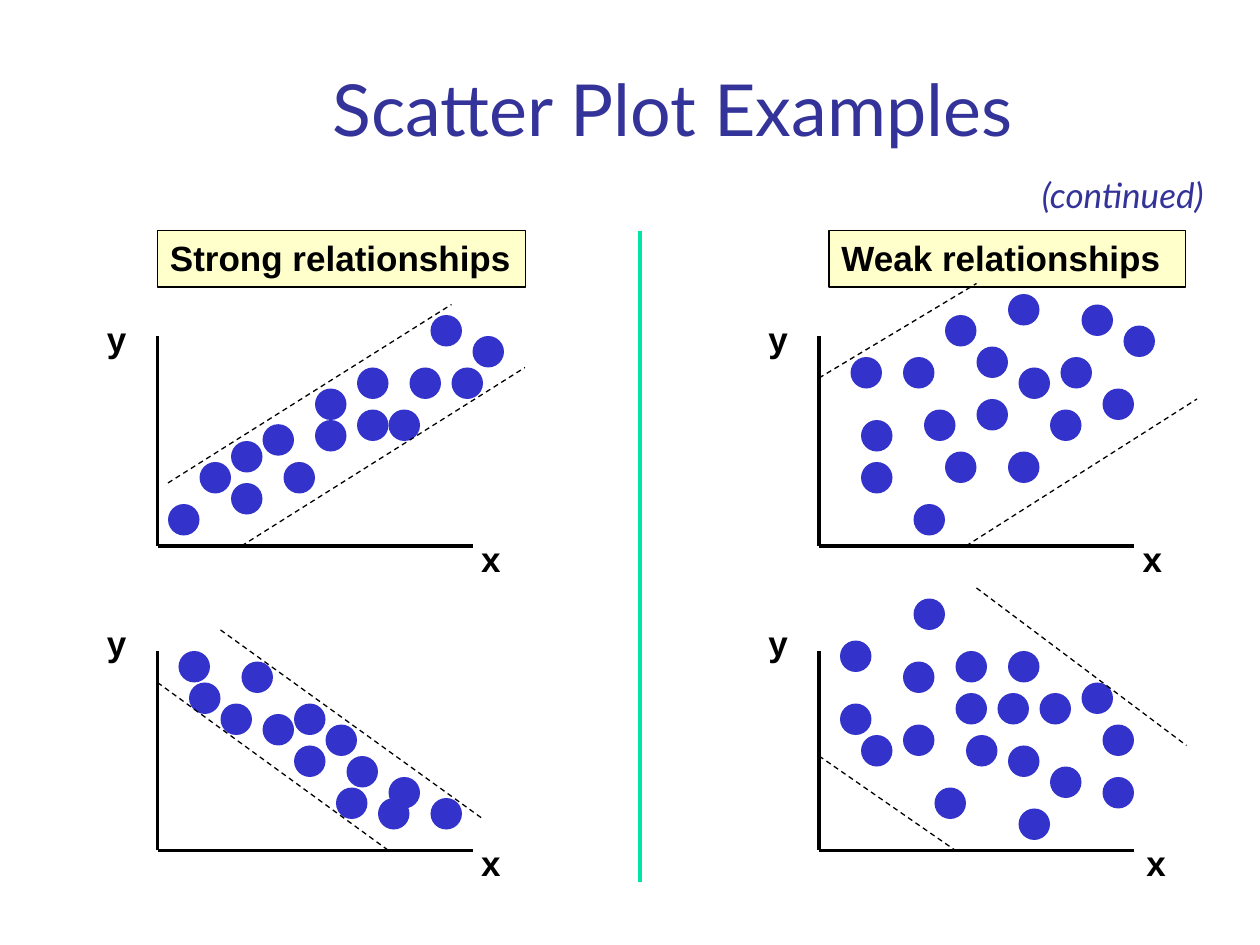
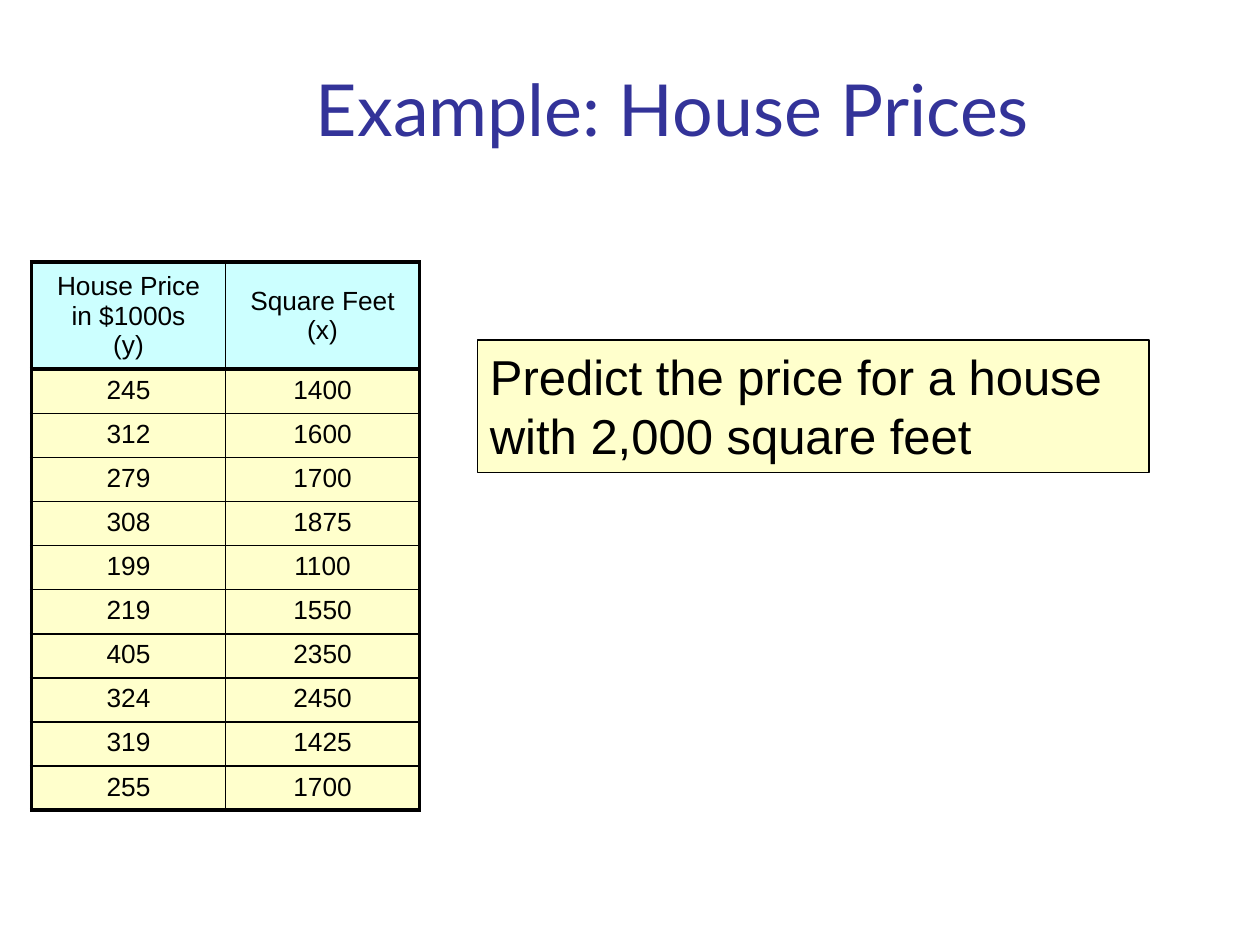
from pptx import Presentation
from pptx.dml.color import RGBColor
from pptx.enum import dml, shapes, text
from pptx.oxml import ns, xmlchemy as xc
from pptx.util import Inches, Pt

BLACK, NAVY, DOT = "000000", "333399", "3333CC"
CREAM, AQUA, GREEN = "FFFFCC", "CCFFFF", "00E4A8"
GRID = 1 / 12
LABEL = dict(name="Arial", size=Pt(20), bold=True)
TITLE = dict(name="Lato", size=Pt(41))
CONTINUED = dict(name="Lato", size=Pt(20), italic=True)
PROMPT = dict(name="Arial", size=Pt(28))
CELL = dict(name="Arial", size=Pt(15))

PLOTS = [
    dict(left=1.25, top=32 * GRID, height=20, y_label=2.47,
         dots=[(1, 16), (4, 12), (26, -2), (28, 3), (7, 14), (30, 0), (19, 7), (19, 3),
               (24, 3), (15, 5), (7, 10), (10, 8.4), (22, 7), (15, 8), (12, 12)],
         bands=[(1, 14, 28, -3), (8, 20, 35, 3)]),
    dict(left=1.25, top=62 * GRID, height=19, y_label=4.88,
         dots=[(21, 14), (3, 3), (26, 14), (8, 1), (18, 10), (22, 12), (13, 5), (2, 0),
               (6, 5), (10, 6), (17, 13), (16, 7), (13, 9)],
         bands=[(6, -2, 31, 16), (0, 3, 22, 19)]),
    dict(left=6.5, top=32 * GRID, height=20, y_label=2.47,
         dots=[(15, 1), (4, 12), (18, 11), (23, 2), (8, 2), (9, 16), (12, 11), (19, 3),
               (12, -2), (4, 8), (3, 2), (10, 7), (22, 7), (15, 6), (18, -4), (29, -1),
               (27, 5), (25, -3)],
         bands=[(0, 4, 15, -5), (14, 20, 36, 6)]),
    dict(left=6.5, top=62 * GRID, height=19, y_label=4.88, x_shift=0,
         dots=[(2, 5), (2, -1), (8, 7), (19, 15), (4, 8), (13, 0), (18, 9), (17, 4),
               (13, 4), (8, 1), (21, 4), (14, 8), (11, 13), (22, 11), (27, 7), (25, 3),
               (27, 12), (18, 0), (9, -5)],
         bands=[(15, -6, 35, 9), (0, 10, 13, 19)]),
]

HOUSES = [(245, 1400), (312, 1600), (279, 1700), (308, 1875), (199, 1100),
          (219, 1550), (405, 2350), (324, 2450), (319, 1425), (255, 1700)]
HEADINGS = [("House Price in $1000s", "(y)"), ("Square Feet", "(x)")]


def rgb(value):
    return RGBColor.from_string(value)


def inches(*values):
    return [Inches(v) for v in values]


def write(p, words, style, color=BLACK):
    r = p.add_run()
    r.text = words
    for key, value in style.items():
        setattr(r.font, key, value)
    r.font.color.rgb = rgb(color)


def add_text(s, box, words, style, color=BLACK, wrap=False):
    tf = s.shapes.add_textbox(*inches(*box)).text_frame
    tf.word_wrap = wrap
    write(tf.paragraphs[0], words, style, color)
    return tf


def add_title(s, words, top):
    tf = add_text(s, (1.08, top, 8.52, 1.25 - top), words, TITLE, NAVY, wrap=True)
    tf.vertical_anchor = text.MSO_ANCHOR.BOTTOM
    tf.paragraphs[0].alignment = text.PP_ALIGN.CENTER


def add_shape(s, kind, box, fill):
    sp = s.shapes.add_shape(kind, *inches(*box))
    sp.shadow.inherit = False
    sp.fill.solid()
    sp.fill.fore_color.rgb = rgb(fill)
    sp.line.fill.background()
    return sp


def add_panel(s, box, words, style):
    sp = add_shape(s, shapes.MSO_SHAPE.RECTANGLE, box, CREAM)
    sp.line.color.rgb = rgb(BLACK)
    sp.line.width = Pt(1)
    tf = sp.text_frame
    tf.word_wrap = True
    tf.vertical_anchor = text.MSO_ANCHOR.TOP
    p = tf.paragraphs[0]
    p.alignment = text.PP_ALIGN.LEFT
    write(p, words, style)


def add_line(s, ends, width, color=BLACK, dash=None):
    line = s.shapes.add_connector(shapes.MSO_CONNECTOR.STRAIGHT, *inches(*ends))
    line.line.color.rgb = rgb(color)
    line.line.width = Pt(width)
    if dash:
        line.line.dash_style = dash
    line._element.spPr.append(xc.OxmlElement("a:effectLst"))


def add_plot(s, left, top, height, y_label, dots, bands, x_shift=-0.03):
    right, bottom = left + 2.5, top + height * GRID
    add_line(s, (left, top, left, bottom), 2)
    add_line(s, (left, bottom, right, bottom), 2)
    add_text(s, (left - 0.5, y_label, 0.36, 0.43), "y", LABEL)
    add_text(s, (right + x_shift, bottom - 0.12, 0.36, 0.43), "x", LABEL)
    for x, y in dots:
        add_shape(s, shapes.MSO_SHAPE.OVAL,
                  (left + x * GRID, top + y * GRID, 0.25, 0.25), DOT)
    for x1, y1, x2, y2 in bands:
        ends = (left + x1 * GRID, top + y1 * GRID, left + x2 * GRID, top + y2 * GRID)
        add_line(s, ends, 0.75, dash=dml.MSO_LINE.DASH)


def set_borders(cell, widths):
    tcPr = cell._tc.get_or_add_tcPr()
    for side, width in zip("LRTB", widths):
        ln = xc.OxmlElement(f"a:ln{side}")
        ln.set("w", str(Pt(width)))
        fill = xc.OxmlElement("a:solidFill")
        color = xc.OxmlElement("a:srgbClr")
        color.set("val", BLACK)
        fill.append(color)
        ln.append(fill)
        tcPr.append(ln)


def fill_cell(cell, lines, fill, widths):
    set_borders(cell, widths)
    cell.fill.solid()
    cell.fill.fore_color.rgb = rgb(fill)
    tf = cell.text_frame
    for i, words in enumerate(lines):
        p = tf.add_paragraph() if i else tf.paragraphs[0]
        p.alignment = text.PP_ALIGN.CENTER
        if i:
            p.line_spacing = 0.8
            p.space_before = Pt(3)
        write(p, words, CELL)


def add_house_table(s, left, top, width):
    rows = [HEADINGS] + [[(str(v),) for v in house] for house in HOUSES]
    heights = [0.85] + [0.35] * len(HOUSES)
    frame = s.shapes.add_table(len(rows), 2, *inches(left, top, width, sum(heights)))
    table = frame.table
    table.first_row = table.horz_banding = False
    for column in table.columns:
        column.width = Inches(width / 2)
    last = len(rows) - 1
    for i, row in enumerate(rows):
        table.rows[i].height = Inches(heights[i])
        for j, lines in enumerate(row):
            cell = table.cell(i, j)
            thick = (j == 0, j == 1, i < 2, i in (0, last))
            fill_cell(cell, lines, CREAM if i else AQUA,
                      [2.25 if t else 1 for t in thick])
            if i == 0:
                cell.vertical_anchor = text.MSO_ANCHOR.MIDDLE


def scatter_slide(s):
    add_title(s, "Scatter Plot Examples", 0.42)
    add_text(s, (8.17, 1.33, 1.61, 0.43), "(continued)", CONTINUED, NAVY)
    add_panel(s, (1.25, 1.83, 2.92, 0.45), "Strong relationships", LABEL)
    add_panel(s, (6.58, 1.83, 2.83, 0.45), "Weak relationships", LABEL)
    add_line(s, (5.08, 1.83, 5.08, 7), 2.25, GREEN)
    for plot in PLOTS:
        add_plot(s, **plot)


def house_slide(s):
    add_house_table(s, 0.25, 2.08, 3.08)
    add_title(s, "Example: House Prices", 0.5)
    add_panel(s, (3.79, 2.7, 5.33, 1.05),
              "Predict the price for a house with 2,000 square feet", PROMPT)


def main():
    prs = Presentation()
    prs.slide_width, prs.slide_height = inches(10, 7.5)
    for build in (scatter_slide, house_slide):
        build(prs.slides.add_slide(prs.slide_layouts[6]))
    prs.save("out.pptx")


if __name__ == "__main__":
    main()
